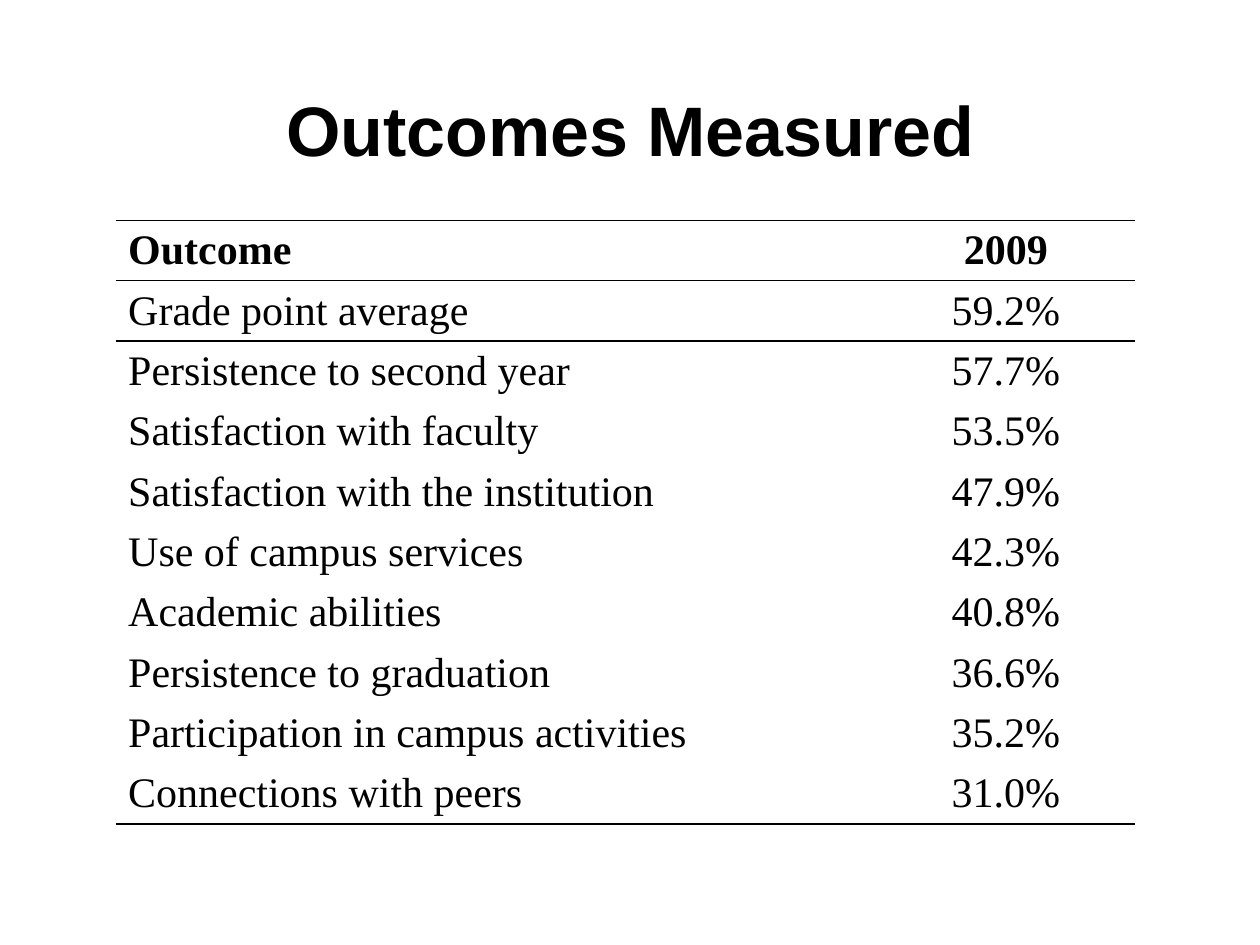
from lxml import etree
from pptx import Presentation
from pptx import util as u
from pptx.dml import color
from pptx.enum import text
from pptx.oxml import ns

COLOURS = {"ink": "000000", "paper": "FFFFFF"}
PLAIN_TABLE_STYLE = "{2D5ABB26-0587-4C30-8999-92F81FD0307C}"

HEADER = ("Outcome", "2009")
OUTCOMES = [
    ("Grade point average", "59.2%"),
    ("Persistence to second year", "57.7%"),
    ("Satisfaction with faculty", "53.5%"),
    ("Satisfaction with the institution", "47.9%"),
    ("Use of campus services", "42.3%"),
    ("Academic abilities", "40.8%"),
    ("Persistence to graduation", "36.6%"),
    ("Participation in campus activities", "35.2%"),
    ("Connections with peers", "31.0%"),
]


class SlideBuilder:
    title_font = "Arial"
    table_font = "Times New Roman"

    def __init__(self, slide):
        self.slide = slide
        fill = slide.background.fill
        fill.solid()
        fill.fore_color.rgb = color.RGBColor.from_string(COLOURS["paper"])

    def format_paragraph(self, paragraph, font_name, size, bold, alignment):
        paragraph.alignment = alignment
        for run in paragraph.runs:
            run.font.name = font_name
            run.font.size = u.Pt(size)
            run.font.bold = bold
            run.font.color.rgb = color.RGBColor.from_string(COLOURS["ink"])

    def add_title(self, wording, left, top, width, height):
        shape = self.slide.shapes.add_textbox(
            u.Cm(left), u.Cm(top), u.Cm(width), u.Cm(height))
        frame = shape.text_frame
        frame.word_wrap = True
        frame.margin_top = u.Cm(0.28)
        frame.text = wording
        self.format_paragraph(frame.paragraphs[0], self.title_font, 40, True,
                              text.PP_ALIGN.CENTER)

    def add_rule(self, cell, side):
        """Draw a 1 pt rule on one side of a cell: lnT or lnB."""
        properties = cell._tc.get_or_add_tcPr()
        line = etree.SubElement(properties, ns.qn(f"a:{side}"), w=str(u.Pt(1)))
        fill = etree.SubElement(line, ns.qn("a:solidFill"))
        etree.SubElement(fill, ns.qn("a:srgbClr"), val=COLOURS["ink"])

    def add_table(self, rows, left, top, column_widths, row_height, ruled_rows):
        shape = self.slide.shapes.add_table(
            len(rows), len(column_widths), u.Cm(left), u.Cm(top),
            u.Cm(sum(column_widths)), u.Cm(row_height * len(rows)))
        table = shape.table
        table.horz_banding = False
        style = shape._element.find(f".//{ns.qn('a:tableStyleId')}")
        style.text = PLAIN_TABLE_STYLE
        for column, width in zip(table.columns, column_widths):
            column.width = u.Cm(width)

        alignments = (text.PP_ALIGN.LEFT, text.PP_ALIGN.CENTER)
        for i, row in enumerate(rows):
            table.rows[i].height = u.Cm(row_height)
            for j, wording in enumerate(row):
                cell = table.cell(i, j)
                cell.margin_top = cell.margin_bottom = u.Cm(0.1)
                cell.vertical_anchor = text.MSO_ANCHOR.MIDDLE
                cell.text_frame.text = wording
                self.format_paragraph(cell.text_frame.paragraphs[0],
                                      self.table_font, 24, i == 0, alignments[j])
                # Rules come before the fill in the cell properties
                if i == 0:
                    self.add_rule(cell, "lnT")
                if i in ruled_rows:
                    self.add_rule(cell, "lnB")
                cell.fill.background()


def main():
    presentation = Presentation()
    presentation.slide_width = u.Cm(25.4)
    presentation.slide_height = u.Cm(19.05)
    builder = SlideBuilder(
        presentation.slides.add_slide(presentation.slide_layouts[6]))

    # Heading
    builder.add_title("Outcomes Measured", 1.9, 1.47, 21.6, 3.18)

    # Outcomes, ruled below the header, the first and the last row
    rows = [HEADER, *OUTCOMES]
    builder.add_table(rows, left=2.33, top=4.44, column_widths=(15.34, 5.21),
                      row_height=1.19, ruled_rows={0, 1, len(rows) - 1})

    presentation.save("out.pptx")


if __name__ == "__main__":
    main()
